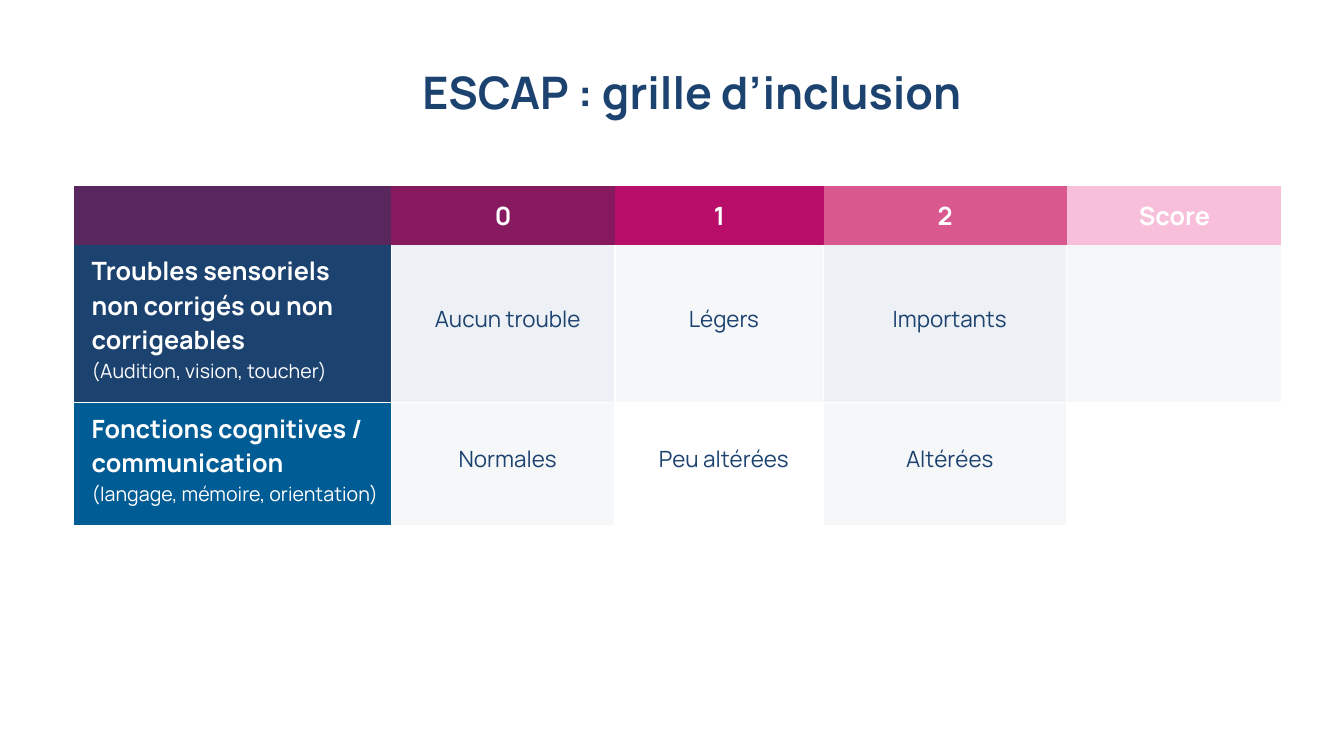
from dataclasses import dataclass

from lxml.etree import SubElement
from pptx import Presentation
from pptx.dml.color import RGBColor as RGB
from pptx.enum.text import MSO_ANCHOR as ANCHOR, PP_ALIGN as ALIGN
from pptx.oxml.ns import qn
from pptx.util import Inches, Pt


@dataclass(frozen=True)
class Theme:
    font: str = "Manrope"
    navy: str = "1C4270"
    blue: str = "005C94"
    white: str = "FFFFFF"
    pale: str = "F6F7F9"
    mist: str = "EDF0F4"
    title: int = 32
    heading: int = 18
    body: int = 16
    note: int = 14
    line: int = 1
    edge: int = 3


T = Theme()


@dataclass(frozen=True)
class Style:
    size: int
    color: str
    bold: bool = False


@dataclass(frozen=True)
class GridCell:
    fill: str
    text: str = ""
    note: str = ""


TITLE = Style(T.title, T.navy, True)
HEADING = Style(T.heading, T.white, True)
BODY = Style(T.body, T.navy)
NOTE = Style(T.note, T.white)

COLUMNS = [3.15, 2.22, 2.07, 2.41, 2.14]
ROWS = [0.58, 1.18, 1.18]
GRID = [
    [GridCell("59265E"), GridCell("871A5E", "0"), GridCell("B80D69", "1"),
     GridCell("D9598F", "2"), GridCell("F7BFD9", "Score")],
    [GridCell(T.navy, "Troubles sensoriels\vnon corrigés ou non corrigeables",
              "(Audition, vision, toucher)"),
     GridCell(T.mist, "Aucun trouble"), GridCell(T.pale, "Légers"),
     GridCell(T.mist, "Importants"), GridCell(T.pale)],
    [GridCell(T.blue, "Fonctions cognitives / communication",
              "(langage, mémoire, orientation)"),
     GridCell(T.pale, "Normales"), GridCell(T.white, "Peu altérées"),
     GridCell(T.pale, "Altérées"), GridCell(T.white)],
]


def write(p, text: str, style: Style, align: ALIGN) -> None:
    p.text = text
    p.alignment = align
    for r in p.runs:
        r.font.name = T.font
        r.font.size = Pt(style.size)
        r.font.bold = style.bold
        r.font.color.rgb = RGB.from_string(style.color)


def set_insets(target, left: float, top: float, right: float, bottom: float) -> None:
    target.margin_left, target.margin_top = Inches(left), Inches(top)
    target.margin_right, target.margin_bottom = Inches(right), Inches(bottom)


def set_borders(cell, row: int, col: int) -> None:
    """White rules between body cells; none around the header or outer left."""
    right = T.edge if col == len(COLUMNS) - 1 else T.line * (row > 0)
    widths = {"L": T.line * (row > 0 and col > 0), "R": right,
              "T": T.line * (row > 1), "B": T.line * (row > 0)}
    props = cell._tc.get_or_add_tcPr()
    for side, width in widths.items():
        ln = SubElement(props, qn(f"a:ln{side}"), w=str(Pt(width)))
        if width:
            fill = SubElement(ln, qn("a:solidFill"))
            SubElement(fill, qn("a:srgbClr"), val=T.white)
        else:
            SubElement(ln, qn("a:noFill"))


def draw_cell(cell, item: GridCell, row: int, col: int) -> None:
    set_borders(cell, row, col)
    cell.fill.solid()
    cell.fill.fore_color.rgb = RGB.from_string(item.fill)
    cell.vertical_anchor = ANCHOR.MIDDLE
    set_insets(cell, *((0.18, 0.09, 0.09, 0.18) if row else (0.09, 0.05, 0.09, 0.05)))
    style = HEADING if row == 0 or col == 0 else BODY
    align = ALIGN.CENTER if col else ALIGN.LEFT
    tf = cell.text_frame
    write(tf.paragraphs[0], item.text, style, align)
    if item.note:
        write(tf.add_paragraph(), item.note, NOTE, align)


def draw_title(s) -> None:
    sp = s.shapes.add_textbox(Inches(1.27), Inches(0.57), Inches(11.19), Inches(0.61))
    tf = sp.text_frame
    tf.word_wrap = True
    tf.vertical_anchor = ANCHOR.BOTTOM
    set_insets(tf, 0, 0, 0, 0)
    write(tf.paragraphs[0], "ESCAP : grille d’inclusion", TITLE, ALIGN.CENTER)


def draw_grid(s) -> None:
    table = s.shapes.add_table(len(ROWS), len(COLUMNS), Inches(0.73), Inches(1.85),
                               Inches(sum(COLUMNS)), Inches(sum(ROWS))).table
    table.first_row = table.horz_banding = False
    for column, width in zip(table.columns, COLUMNS):
        column.width = Inches(width)
    for row, height in zip(table.rows, ROWS):
        row.height = Inches(height)
    for i, items in enumerate(GRID):
        for j, item in enumerate(items):
            draw_cell(table.cell(i, j), item, i, j)


def main() -> None:
    prs = Presentation()
    prs.slide_width, prs.slide_height = Inches(13.33), Inches(7.5)
    s = prs.slides.add_slide(prs.slide_layouts[6])
    # Inclusion grid
    draw_grid(s)
    # Title
    draw_title(s)
    prs.save("out.pptx")


if __name__ == "__main__":
    main()
